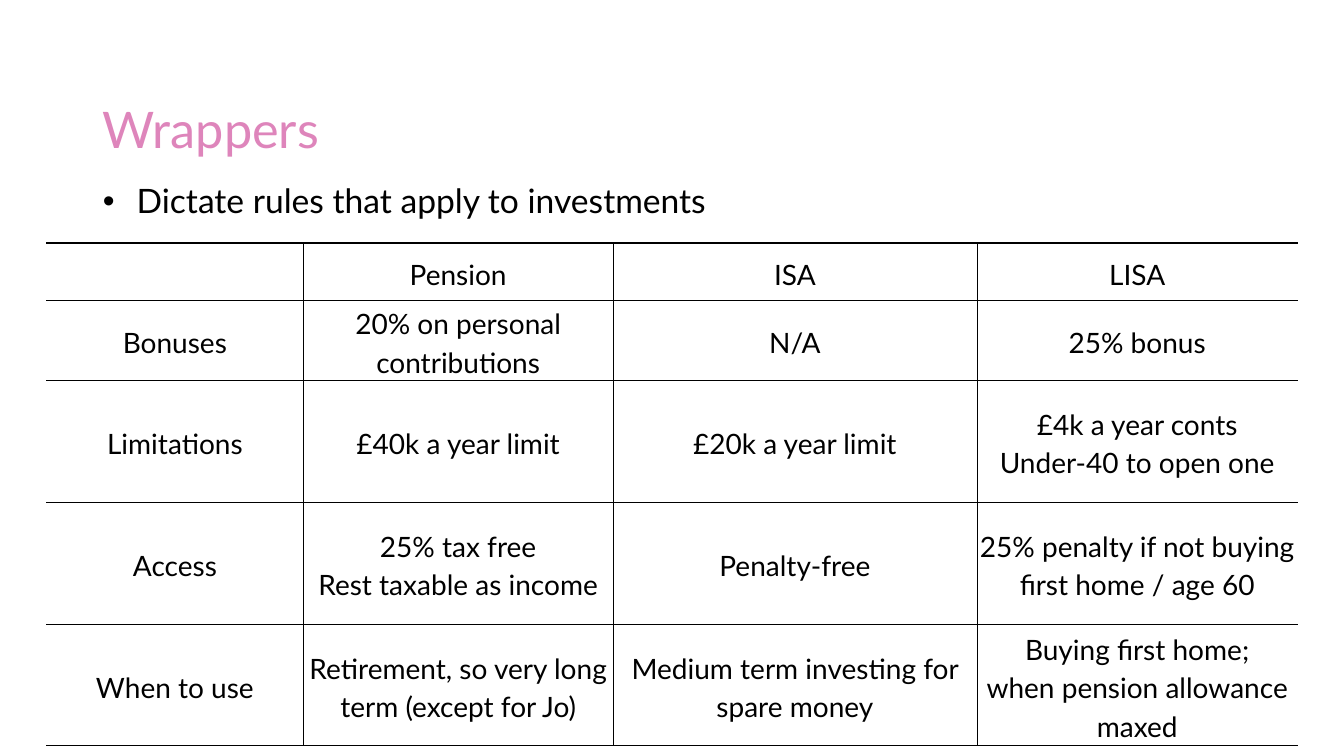
import pptx
import pptx.dml.color
import pptx.enum.text
import pptx.oxml.ns
import pptx.util
from lxml import etree

Inches = pptx.util.Inches
Pt = pptx.util.Pt
ALIGN = pptx.enum.text.PP_ALIGN
ANCHOR = pptx.enum.text.MSO_ANCHOR

FONT = "Lato"
PINK, BLACK, WHITE = "DE85BB", "000000", "FFFFFF"
THIN, THICK = 0.5, 1

COLUMN_WIDTHS = [2.55, 3.07, 3.61, 3.18]
ROW_HEIGHTS = [0.57, 0.79, 1.21, 1.21, 1.21]
WRAPPERS = [
    ["", "Pension", "ISA", "LISA"],
    ["Bonuses", "20% on personal contributions", "N/A", "25% bonus"],
    ["Limitations", "£40k a year limit", "£20k a year limit",
     "£4k a year conts\nUnder-40 to open one"],
    ["Access", "25% tax free\nRest taxable as income", "Penalty-free",
     "25% penalty if not buying first home / age 60"],
    ["When to use", "Retirement, so very long term (except for Jo)",
     "Medium term investing for spare money",
     "Buying first home;\nwhen pension allowance maxed"],
]


def colour(value):
    return pptx.dml.color.RGBColor.from_string(value)


def add_text(para, text, size, value=BLACK):
    """Add a run for each line of text, with line breaks between them."""
    for index, line in enumerate(text.split("\n")):
        if index:
            para.add_line_break()
        span = para.add_run()
        span.text = line
        span.font.name = FONT
        span.font.size = Pt(size)
        span.font.color.rgb = colour(value)


def place(holder, box):
    holder.left, holder.top, holder.width, holder.height = map(Inches, box)
    frame = holder.text_frame
    frame.word_wrap = True
    frame.auto_size = pptx.enum.text.MSO_AUTO_SIZE.NONE
    return frame


def add_title(page, box, text):
    frame = place(page.shapes.title, box)
    frame.vertical_anchor = ANCHOR.MIDDLE
    para = frame.paragraphs[0]
    para.alignment = ALIGN.LEFT
    para.line_spacing = 0.9
    add_text(para, text, 36, PINK)


def add_bullet(page, box, text):
    frame = place(page.placeholders[1], box)
    frame.vertical_anchor = ANCHOR.TOP
    para = frame.paragraphs[0]
    para.line_spacing = 0.9
    para.space_before = Pt(10)
    add_text(para, text, 24)
    properties = para._p.get_or_add_pPr()
    properties.set("marL", str(Inches(0.25)))
    properties.set("indent", str(Inches(-0.25)))
    for tag, key, value in [("a:buFont", "typeface", "Arial"),
                            ("a:buChar", "char", "•")]:
        etree.SubElement(properties, pptx.oxml.ns.qn(tag)).set(key, value)


def add_border(cell, side, width):
    """Draw one side of a cell; a width of 0 leaves it without a line."""
    qn = pptx.oxml.ns.qn
    line = etree.SubElement(cell._tc.get_or_add_tcPr(), qn("a:ln" + side))
    line.set("w", str(Pt(width)))
    if width:
        fill = etree.SubElement(line, qn("a:solidFill"))
        etree.SubElement(fill, qn("a:srgbClr")).set("val", BLACK)
    else:
        etree.SubElement(line, qn("a:noFill"))


def fill_cell(cell, text, borders):
    for side, width in borders.items():
        add_border(cell, side, width)
    cell.fill.solid()
    cell.fill.fore_color.rgb = colour(WHITE)
    cell.vertical_anchor = ANCHOR.MIDDLE
    cell.margin_left = cell.margin_right = cell.margin_top = Inches(0.01)
    cell.margin_bottom = 0
    if text:
        para = cell.text_frame.paragraphs[0]
        para.alignment = ALIGN.CENTER
        para.line_spacing = 1.14
        add_text(para, text, 20)


def add_wrapper_table(page, box):
    row_count, column_count = len(ROW_HEIGHTS), len(COLUMN_WIDTHS)
    table = page.shapes.add_table(row_count, column_count, *map(Inches, box)).table
    table.first_row = table.horz_banding = False
    for column, width in zip(table.columns, COLUMN_WIDTHS):
        column.width = Inches(width)
    for row, height in zip(table.rows, ROW_HEIGHTS):
        row.height = Inches(height)
    for r, texts in enumerate(WRAPPERS):
        for c, text in enumerate(texts):
            borders = {
                "L": THIN if c else 0,
                "R": THIN if c < column_count - 1 else 0,
                "T": THIN if r else THICK,
                "B": THIN if r < row_count - 1 else THICK,
            }
            fill_cell(table.cell(r, c), text, borders)


def main():
    deck = pptx.Presentation()
    deck.slide_width, deck.slide_height = Inches(13.33), Inches(7.5)
    page = deck.slides.add_slide(deck.slide_layouts[1])
    add_title(page, (0.92, 0.85, 11.5, 0.92), "Wrappers")
    add_bullet(page, (0.92, 1.78, 11.5, 0.63),
               " Dictate rules that apply to investments")
    add_wrapper_table(page, (0.46, 2.41, sum(COLUMN_WIDTHS), sum(ROW_HEIGHTS)))
    deck.save("out.pptx")


if __name__ == "__main__":
    main()
